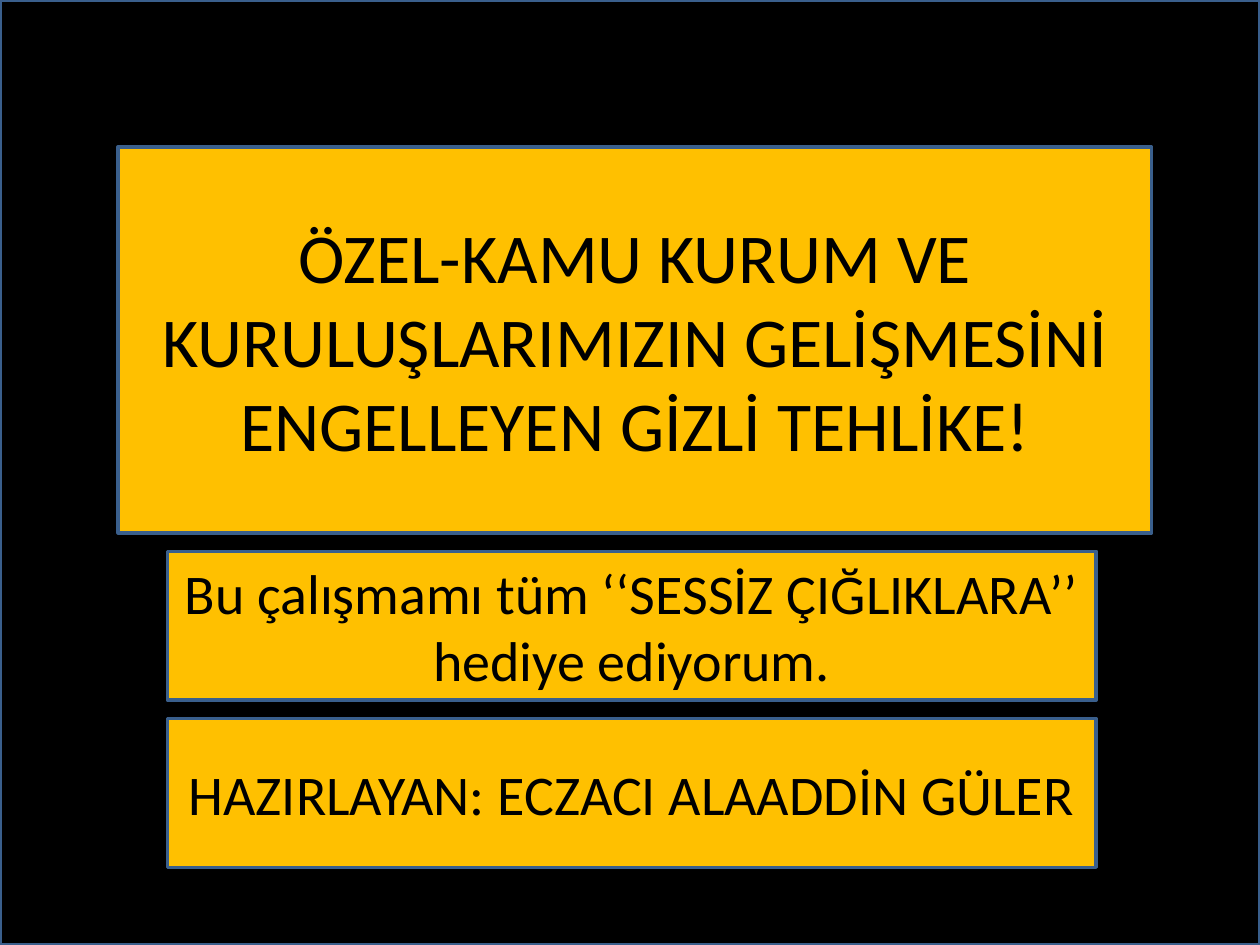
from dataclasses import dataclass

from pptx import Presentation
from pptx.dml.color import RGBColor as RGB
from pptx.enum.shapes import MSO_SHAPE as Shape
from pptx.enum.text import MSO_ANCHOR as Anchor, MSO_AUTO_SIZE as AutoSize, PP_ALIGN as Align
from pptx.util import Pt

# Content
TITLE = "ÖZEL-KAMU KURUM VE KURULUŞLARIMIZIN GELİŞMESİNİ ENGELLEYEN GİZLİ TEHLİKE!"
DEDICATION = "Bu çalışmamı tüm ‘‘SESSİZ ÇIĞLIKLARA’’ hediye ediyorum."
AUTHOR = "HAZIRLAYAN: ECZACI ALAADDİN GÜLER"


@dataclass(frozen=True)
class Theme:
    font: str = "Calibri"
    title_size: int = 40
    body_size: int = 32
    backdrop: RGB = RGB(0x00, 0x00, 0x00)
    panel: RGB = RGB(0xFF, 0xC0, 0x00)
    outline: RGB = RGB(0x3A, 0x5F, 0x8C)
    ink: RGB = RGB(0x00, 0x00, 0x00)
    line_width: int = 2


THEME = Theme()

# Layout in points
WIDTH, HEIGHT = 720, 540
TITLE_BOX = (67.5, 84, 590.5, 220.5)
PANEL_LEFT, PANEL_TOP = 95.6, 315
PANEL_WIDTH, PANEL_HEIGHT, PANEL_STEP = 530.8, 85, 95.6


def panel_box(row):
    return PANEL_LEFT, PANEL_TOP + row * PANEL_STEP, PANEL_WIDTH, PANEL_HEIGHT


def paint(box, fill):
    box.fill.solid()
    box.fill.fore_color.rgb = fill
    box.line.color.rgb = THEME.outline
    box.line.width = Pt(THEME.line_width)


def add_rectangle(page, bounds):
    box = page.shapes.add_shape(Shape.RECTANGLE, *map(Pt, bounds))
    box.shadow.inherit = False
    return box


def fill_panel(box, bounds, text, size):
    box.left, box.top, box.width, box.height = map(Pt, bounds)
    paint(box, THEME.panel)
    frame = box.text_frame
    frame.text = text
    frame.word_wrap = True
    frame.auto_size = AutoSize.NONE
    frame.vertical_anchor = Anchor.MIDDLE
    para = frame.paragraphs[0]
    para.alignment = Align.CENTER
    para.space_before = Pt(0)
    for span in para.runs:
        span.font.name = THEME.font
        span.font.size = Pt(size)
        span.font.color.rgb = THEME.ink


def main():
    deck = Presentation()
    deck.slide_width, deck.slide_height = Pt(WIDTH), Pt(HEIGHT)
    page = deck.slides.add_slide(deck.slide_layouts[0])
    title, dedication = page.placeholders

    # Framed black backdrop, sent behind the placeholders
    backdrop = add_rectangle(page, (0, 0, WIDTH, HEIGHT))
    paint(backdrop, THEME.backdrop)
    title.element.addprevious(backdrop.element)

    # Title, then two equal panels below it
    fill_panel(title, TITLE_BOX, TITLE, THEME.title_size)
    fill_panel(dedication, panel_box(0), DEDICATION, THEME.body_size)
    author = add_rectangle(page, panel_box(1))
    fill_panel(author, panel_box(1), AUTHOR, THEME.body_size)

    deck.save("out.pptx")


if __name__ == "__main__":
    main()
